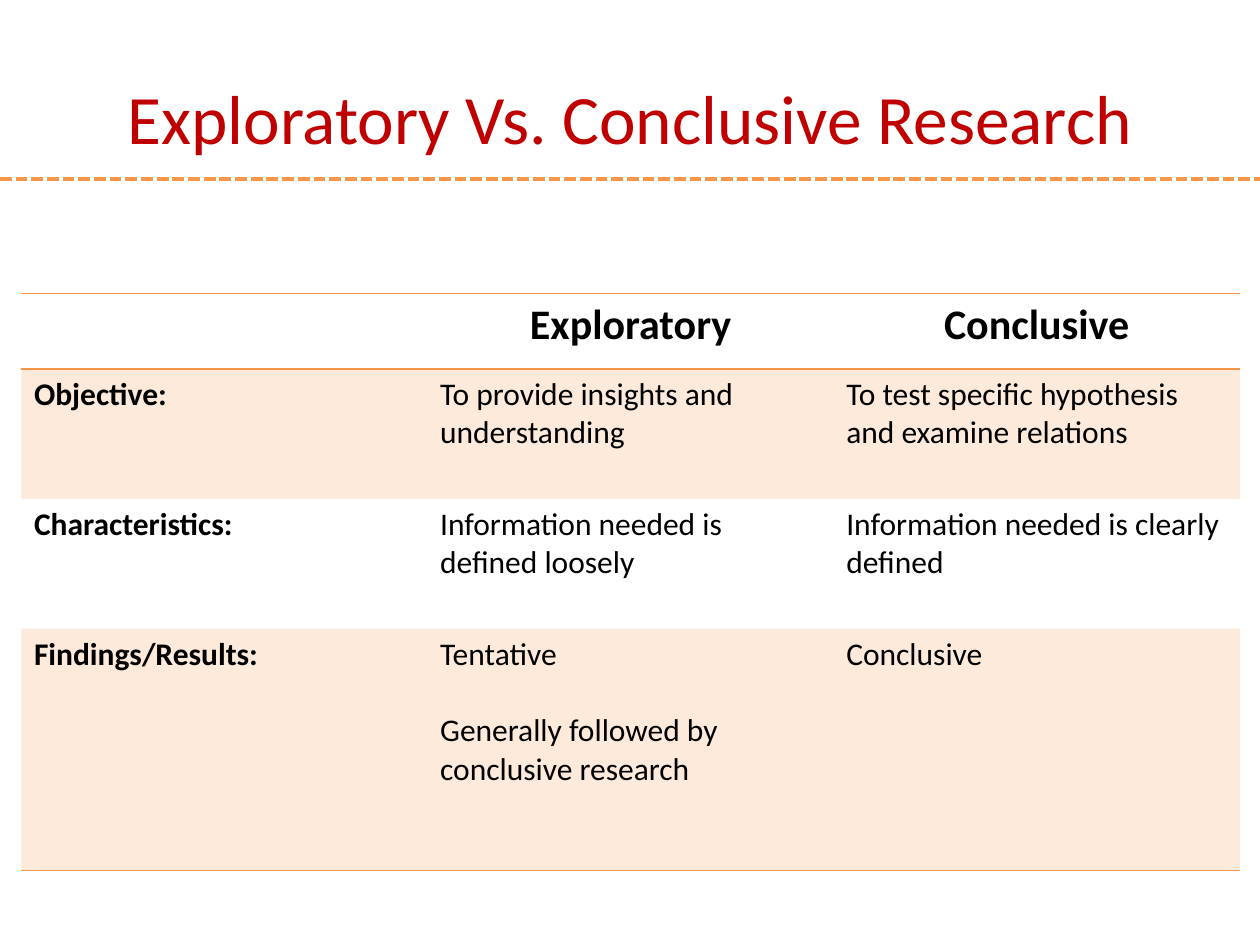
import pptx
import pptx.util
import pptx.dml.color
import pptx.enum.dml
import pptx.enum.shapes
import pptx.enum.text
import pptx.oxml.ns
from lxml import etree

Inches = pptx.util.Inches
Pt = pptx.util.Pt
RGBColor = pptx.dml.color.RGBColor
Align = pptx.enum.text.PP_ALIGN
qn = pptx.oxml.ns.qn

RED = RGBColor(0xC0, 0x00, 0x00)
ORANGE = RGBColor(0xF7, 0x96, 0x46)
BLACK = RGBColor(0x00, 0x00, 0x00)
FONT = "Calibri"
PLAIN = "{2D5ABB26-0587-4C30-8999-92F81FD0307C}"  # no style, no grid

ROWS = [
    ["", "Exploratory", "Conclusive"],
    ["Objective:", "To provide insights and understanding",
     "To test specific hypothesis and examine relations"],
    ["Characteristics:", "Information needed is defined loosely",
     "Information needed is clearly defined"],
    ["Findings/Results:",
     "Tentative\nGenerally followed by conclusive research", "Conclusive"],
]
HEIGHTS = [0.6, 1.03, 1.03, 1.92]


def style(frame, size, color, bold=False, align=Align.LEFT):
    for para in frame.paragraphs:
        para.alignment = align
        for run in para.runs:
            font = run.font
            font.name, font.size, font.bold = FONT, Pt(size), bold
            font.color.rgb = color


def add_title(slide, left, top, width, height):
    box = slide.shapes.add_textbox(left, top, width, height)
    frame = box.text_frame
    frame.word_wrap = True
    frame.vertical_anchor = pptx.enum.text.MSO_ANCHOR.MIDDLE
    frame.text = "Exploratory Vs. Conclusive Research"
    style(frame, 39.6, RED, align=Align.CENTER)


def add_rule(slide, left, top, width):
    rule = slide.shapes.add_connector(
        pptx.enum.shapes.MSO_CONNECTOR.STRAIGHT, left, top, left + width, top)
    rule.line.color.rgb = ORANGE
    rule.line.width = Pt(2.25)
    rule.line.dash_style = pptx.enum.dml.MSO_LINE.SQUARE_DOT
    etree.SubElement(rule._element.spPr, qn("a:effectLst"))


def add_edge(cell, tag):
    """Draw one cell border; tag is a:lnT or a:lnB."""
    edge = etree.Element(qn(tag), w=str(Pt(1)))
    fill = etree.SubElement(edge, qn("a:solidFill"))
    etree.SubElement(fill, qn("a:srgbClr"), val=str(ORANGE))
    cell._tc.get_or_add_tcPr().insert(0, edge)


def tint(cell):
    """Fill the cell with orange at 20% opacity."""
    cell.fill.solid()
    cell.fill.fore_color.rgb = ORANGE
    color = cell._tc.tcPr.find(".//" + qn("a:srgbClr"))
    etree.SubElement(color, qn("a:alpha"), val="20000")


def fill_cell(cell, text, row, col):
    head = row == 0
    frame = cell.text_frame
    frame.text = text
    style(frame, 24 if head else 18, BLACK, head or col == 0,
          Align.CENTER if head else Align.LEFT)
    for para in frame.paragraphs[1:]:
        para.space_before = Pt(22)
    if row % 2:
        tint(cell)
    else:
        cell.fill.background()
    if head or row == len(ROWS) - 1:
        add_edge(cell, "a:lnB")
    if head:
        add_edge(cell, "a:lnT")


def add_grid(slide, left, top, width, height):
    count = len(ROWS[0])
    table = slide.shapes.add_table(
        len(ROWS), count, left, top, width, height).table
    table.first_row = table.horz_banding = False
    table._tbl.tblPr.find(qn("a:tableStyleId")).text = PLAIN
    for col in table.columns:
        col.width = int(width / count)
    for row, (texts, tall) in enumerate(zip(ROWS, HEIGHTS)):
        table.rows[row].height = Inches(tall)
        for col, text in enumerate(texts):
            fill_cell(table.cell(row, col), text, row, col)


def main():
    deck = pptx.Presentation()
    deck.slide_width, deck.slide_height = Inches(10), Inches(7.5)
    slide = deck.slides.add_slide(deck.slide_layouts[6])
    add_title(slide, Inches(0.5), Inches(0.3), Inches(9), Inches(1.25))
    add_grid(slide, Inches(0.17), Inches(2.33), Inches(9.67),
             Inches(sum(HEIGHTS)))
    add_rule(slide, 0, Inches(1.42), deck.slide_width)
    deck.save("out.pptx")


if __name__ == "__main__":
    main()
